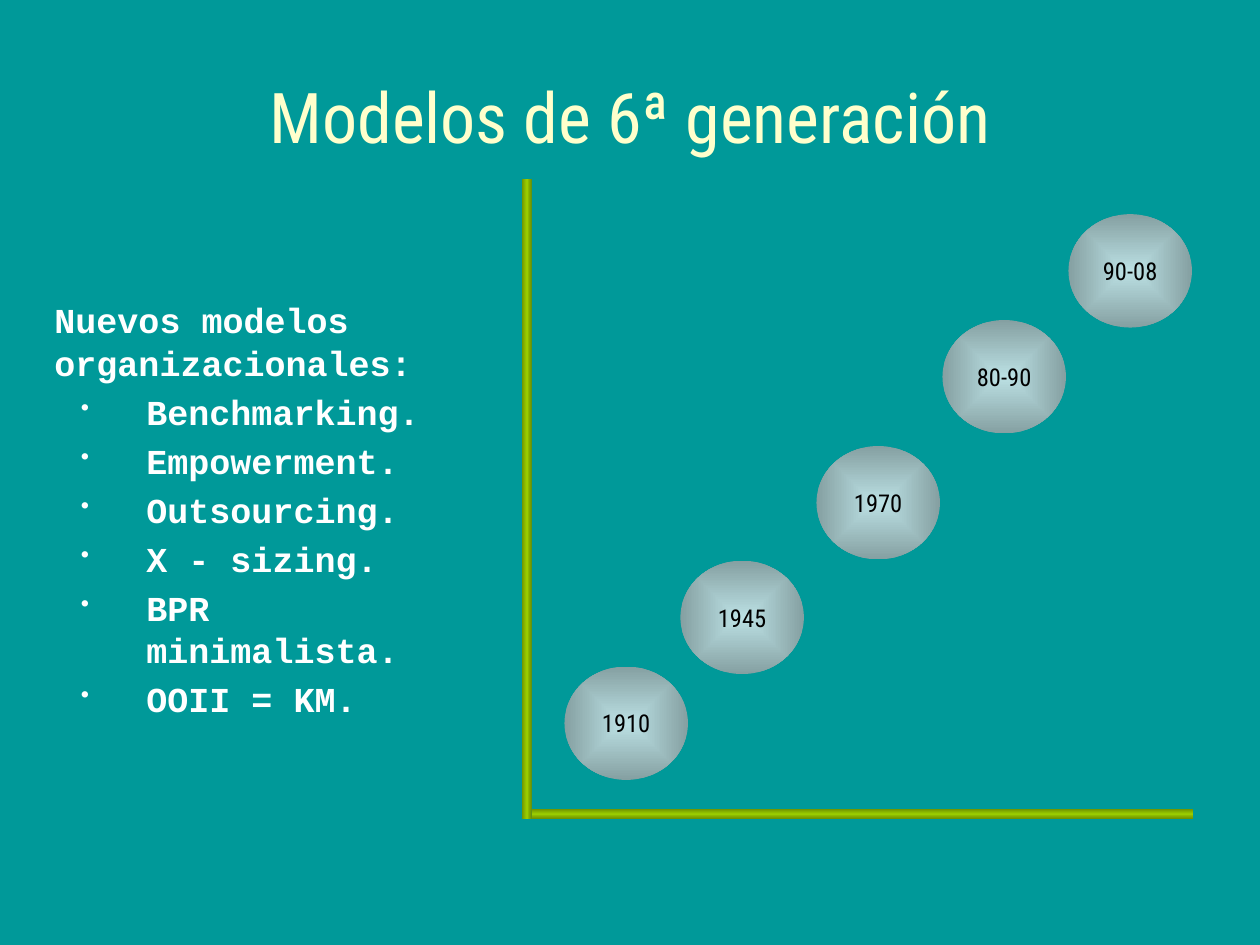
from lxml import etree
from pptx import Presentation, util as u
from pptx.dml.color import RGBColor
from pptx.enum import shapes, text
from pptx.oxml import ns

# Content
TITLE = "Modelos de 6ª generación"
LEAD = "Nuevos modelos organizacionales:"
ITEMS = ["Benchmarking.", "Empowerment.", "Outsourcing.", "X - sizing.",
         "BPR minimalista.", "OOII = KM."]
ERAS = [("1910", 4.48, 5.29), ("1945", 5.4, 4.45), ("1970", 6.48, 3.54),
        ("80-90", 7.48, 2.54), ("90-08", 8.48, 1.7)]  # label, left, top

THEME = dict(
    back="009999", title="FFFFCC", body="FFFFFF", label="000000",
    ball="BBE0E3", axis="99CC00", shade=46275,
    head="Roboto Condensed", mono="Courier New",
    big=40, mid=20, small=14,
)

# Layout in inches
WIDE, HIGH = 10, 7.5
EDGE = WIDE / 30
BALL = (0.98, 0.9)
LEFT, TOP, BASE, END, THICK = 4.14, 1.42, 6.5, 9.47, 0.08


def style(para, face, size, color, bold=False):
    font = para.font
    font.name, font.size, font.bold = face, u.Pt(size), bold
    font.color.rgb = RGBColor.from_string(THEME[color])


def write(slide, box):
    frame = slide.shapes.add_textbox(*map(u.Inches, box)).text_frame
    frame.word_wrap = True
    frame.vertical_anchor = text.MSO_ANCHOR.MIDDLE
    return frame


def blend(shape, color, stops, shade):
    """Fill with a gradient; stops are (percent, is dark)."""
    props = shape._element.spPr
    grad = etree.Element(ns.qn("a:gradFill"), rotWithShape="1")
    rows = etree.SubElement(grad, ns.qn("a:gsLst"))
    for pos, dark in stops:
        stop = etree.SubElement(rows, ns.qn("a:gs"), pos=str(pos * 1000))
        tint = etree.SubElement(stop, ns.qn("a:srgbClr"), val=THEME[color])
        if dark:
            etree.SubElement(tint, ns.qn("a:shade"), val=str(THEME["shade"]))
    grad.append(shade)
    props.find(ns.qn("a:prstGeom")).addnext(grad)


def linear(angle):
    return etree.Element(ns.qn("a:lin"), ang=str(angle * 60000), scaled="1")


def center():
    way = etree.Element(ns.qn("a:path"), path="shape")
    half = dict.fromkeys("ltrb", "50000")
    etree.SubElement(way, ns.qn("a:fillToRect"), half)
    return way


def add(slide, kind, box):
    shape = slide.shapes.add_shape(kind, *map(u.Inches, box))
    shape.shadow.inherit = False
    shape.line.fill.background()
    return shape


def bullet(para):
    props = para._p.get_or_add_pPr()
    props.set("marL", str(u.Inches(0.73)))
    props.set("indent", str(u.Inches(-0.52)))
    etree.SubElement(props, ns.qn("a:buSzPct"), val="70000")
    etree.SubElement(props, ns.qn("a:buChar"), char="•")


def main():
    deck = Presentation()
    deck.slide_width, deck.slide_height = u.Inches(WIDE), u.Inches(HIGH)
    slide = deck.slides.add_slide(deck.slide_layouts[6])
    fill = slide.background.fill
    fill.solid()
    fill.fore_color.rgb = RGBColor.from_string(THEME["back"])

    # Title
    para = write(slide, (EDGE, 0.58, WIDE - 2 * EDGE, 0.67)).paragraphs[0]
    para.text, para.alignment = TITLE, text.PP_ALIGN.CENTER
    style(para, THEME["head"], THEME["big"], "title")

    # List of models
    frame = write(slide, (EDGE, 1.83, 3.58, 4.42))
    frame.text = LEAD
    style(frame.paragraphs[0], THEME["mono"], THEME["mid"], "body", True)
    for item in ITEMS:
        para = frame.add_paragraph()
        para.text, para.level = item, 1
        bullet(para)
        para.space_before = u.Pt(4)
        style(para, THEME["mono"], THEME["mid"], "body", True)

    # Axes
    bars = [((LEFT, TOP, THICK, BASE - TOP), 0),
            ((LEFT + THICK, BASE - THICK, END - LEFT - THICK, THICK), 90)]
    for box, angle in bars:
        bar = add(slide, shapes.MSO_SHAPE.RECTANGLE, box)
        blend(bar, "axis", [(0, True), (50, False), (100, True)], linear(angle))

    # Eras
    for label, left, top in ERAS:
        ball = add(slide, shapes.MSO_SHAPE.OVAL, (left, top, *BALL))
        blend(ball, "ball", [(0, False), (100, True)], center())
        frame = ball.text_frame
        frame.word_wrap = False
        frame.vertical_anchor = text.MSO_ANCHOR.MIDDLE
        para = frame.paragraphs[0]
        para.text, para.alignment = label, text.PP_ALIGN.CENTER
        style(para, THEME["head"], THEME["small"], "label")

    deck.save("out.pptx")


if __name__ == "__main__":
    main()
